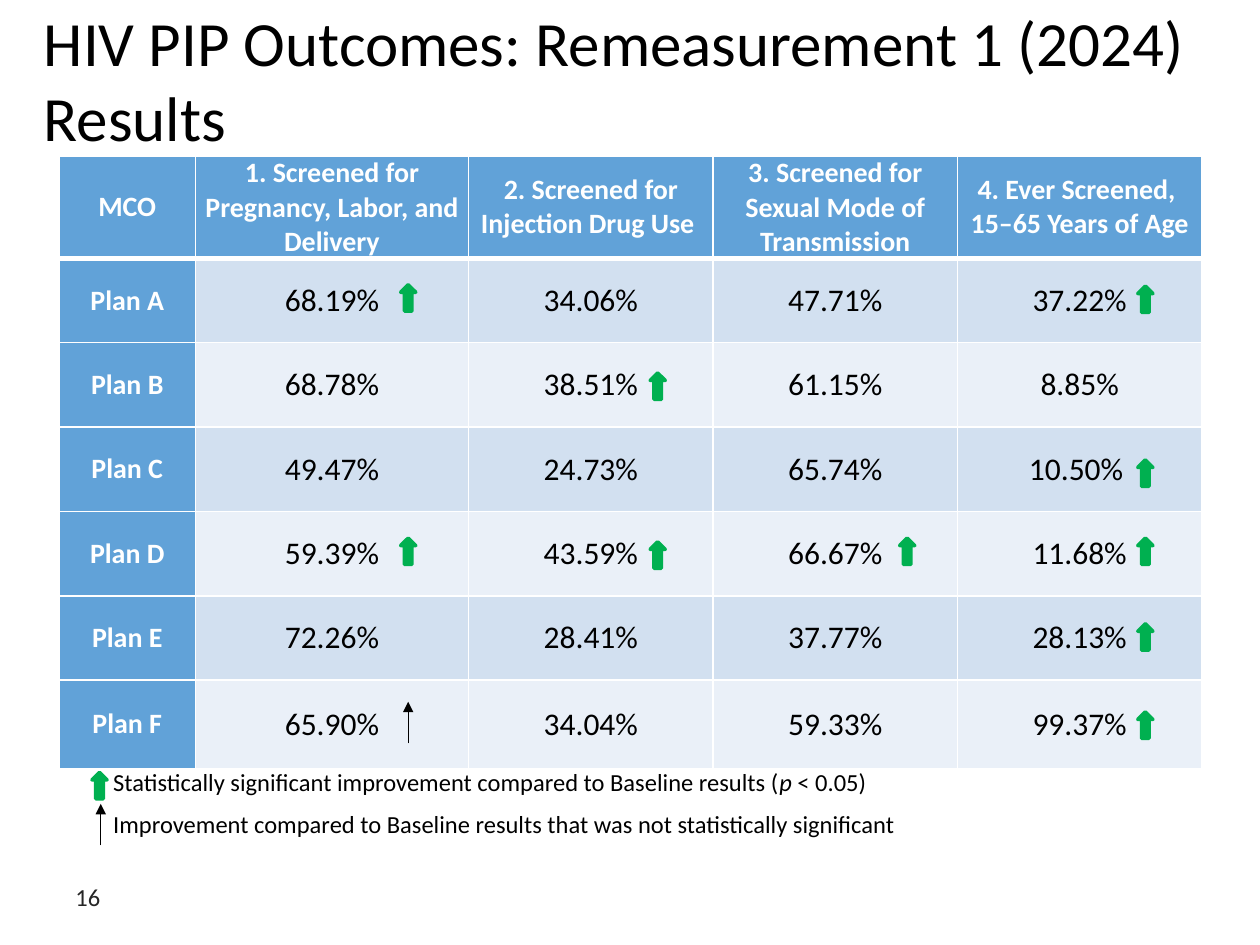
from dataclasses import dataclass
from typing import NamedTuple

from lxml.etree import SubElement
from pptx import Presentation
from pptx.dml.color import RGBColor
from pptx.enum.shapes import MSO_CONNECTOR, MSO_SHAPE
from pptx.enum.text import MSO_ANCHOR, PP_ALIGN
from pptx.oxml.ns import qn
from pptx.util import Inches, Pt


@dataclass(frozen=True)
class Theme:
    font: str = "Calibri"
    black: str = "000000"
    white: str = "FFFFFF"
    page_number: str = "262626"
    header: str = "61A2D8"
    bands: tuple = ("D2E0F0", "EAF0F8")
    green: str = "00B050"
    title_size: float = 36
    value_size: float = 18
    header_size: float = 16
    note_size: float = 14


class Box(NamedTuple):
    left: float
    top: float
    width: float
    height: float

    def inches(self) -> list:
        return [Inches(v) for v in self]


class Mark(NamedTuple):
    x: float
    y: float


THEME = Theme()
TABLE = Box(0.47, 1.24, 9.06, 4.84)
COLUMNS = [1.08, 2.17, 1.94, 1.94, 1.94]
ROWS = [0.81] + [0.67] * 5 + [0.7]
HEADERS = [
    "MCO",
    "1. Screened for Pregnancy, Labor, and Delivery",
    "2. Screened for Injection Drug Use ",
    "3. Screened for Sexual Mode of Transmission",
    "4. Ever Screened, \n15–65 Years of Age",
]
RESULTS = [
    ["Plan A", "68.19%", "34.06%", "47.71%", "37.22%"],
    ["Plan B", "68.78%", "38.51%", "61.15%", "8.85%"],
    ["Plan C", "49.47%", "24.73%", "65.74%", "10.50% "],
    ["Plan D", "59.39%", "43.59%", "66.67%", "11.68%"],
    ["Plan E", "72.26%", "28.41%", "37.77%", "28.13%"],
    ["Plan F", "65.90%", "34.04%", "59.33%", "99.37%"],
]
# Left edge of the arrows in each measure's column, with their tops
SIGNIFICANT = {
    3.18: [2.26, 4.27],
    5.16: [2.96, 4.3],
    7.14: [4.27],
    9.03: [2.27, 3.65, 4.27, 4.95, 5.65],
    0.73: [6.13],  # legend
}
NOT_SIGNIFICANT = [Mark(3.24, 5.57), Mark(0.8, 6.38)]


def rgb(color: str) -> RGBColor:
    return RGBColor.from_string(color)


def style(p, size: float, color: str, bold: bool = False) -> None:
    p.font.name = THEME.font
    p.font.size = Pt(size)
    p.font.color.rgb = rgb(color)
    p.font.bold = bold


def add_text(s, box: Box, anchor=MSO_ANCHOR.TOP):
    tf = s.shapes.add_textbox(*box.inches()).text_frame
    tf.word_wrap = True
    tf.vertical_anchor = anchor
    return tf


def add_title(s, text: str) -> None:
    tf = add_text(s, Box(0.25, 0.04, 9.5, 1.17), MSO_ANCHOR.MIDDLE)
    tf.margin_left, tf.margin_right = Inches(0.1), 0
    p = tf.paragraphs[0]
    p.text = text
    p.space_after = Pt(2)
    style(p, THEME.title_size, THEME.black)


def set_borders(cell, bottom: float) -> None:
    tc_pr = cell._tc.get_or_add_tcPr()
    for i, (side, width) in enumerate(
        [("lnL", 1), ("lnR", 1), ("lnT", 1), ("lnB", bottom)]
    ):
        ln = tc_pr.makeelement(qn(f"a:{side}"), {"w": str(Pt(width))})
        fill = SubElement(ln, qn("a:solidFill"))
        SubElement(fill, qn("a:srgbClr"), val=THEME.white)
        tc_pr.insert(i, ln)


def fill_cell(cell, text: str, row: int, col: int) -> None:
    is_label = row == 0 or col == 0
    cell.text = text
    cell.vertical_anchor = MSO_ANCHOR.MIDDLE
    cell.margin_left = cell.margin_right = Inches(0.07)
    cell.margin_top = cell.margin_bottom = 0
    cell.fill.solid()
    cell.fill.fore_color.rgb = rgb(
        THEME.header if is_label else THEME.bands[(row - 1) % 2]
    )
    for p in cell.text_frame.paragraphs:
        p.alignment = PP_ALIGN.CENTER
        if row:
            p.space_after = Pt(2)
        if is_label:
            style(p, THEME.header_size, THEME.white, bold=True)
        else:
            style(p, THEME.value_size, THEME.black)
    set_borders(cell, bottom=1 if row else 3)


def add_results(s) -> None:
    table = s.shapes.add_table(len(ROWS), len(COLUMNS), *TABLE.inches()).table
    for column, width in zip(table.columns, COLUMNS):
        column.width = Inches(width)
    for row, height in zip(table.rows, ROWS):
        row.height = Inches(height)
    for i, texts in enumerate([HEADERS, *RESULTS]):
        for j, text in enumerate(texts):
            fill_cell(table.cell(i, j), text, i, j)


def add_significant(s, mark: Mark) -> None:
    sp = s.shapes.add_shape(
        MSO_SHAPE.UP_ARROW, *Box(mark.x, mark.y, 0.12, 0.21).inches()
    )
    sp.shadow.inherit = False
    sp.fill.solid()
    sp.fill.fore_color.rgb = rgb(THEME.green)
    sp.line.color.rgb = rgb(THEME.green)
    sp.line.width = Pt(2)


def add_not_significant(s, mark: Mark) -> None:
    x = Inches(mark.x)
    line = s.shapes.add_connector(
        MSO_CONNECTOR.STRAIGHT, x, Inches(mark.y + 0.33), x, Inches(mark.y)
    )
    line.line.color.rgb = rgb(THEME.black)
    line.line.width = Pt(0.75)
    SubElement(line.line._get_or_add_ln(), qn("a:tailEnd"), type="triangle")
    SubElement(line._element.spPr, qn("a:effectLst"))


def add_legend(s) -> None:
    tf = add_text(s, Box(0.8, 6.04, 8.22, 0.67))
    p = tf.paragraphs[0]
    for text in [
        "Statistically significant improvement compared to Baseline results (",
        "p",
        " < 0.05)",
    ]:
        r = p.add_run()
        r.text = text
        r.font.italic = text == "p"
    style(p, THEME.note_size, THEME.black)
    p = tf.add_paragraph()
    p.text = (
        "Improvement compared to Baseline results "
        "that was not statistically significant"
    )
    p.space_before = Pt(7)
    style(p, THEME.note_size, THEME.black)


def main() -> None:
    prs = Presentation()
    prs.slide_width, prs.slide_height = Inches(10), Inches(7.5)
    s = prs.slides.add_slide(prs.slide_layouts[6])
    add_title(s, "HIV PIP Outcomes: Remeasurement 1 (2024) Results")
    p = add_text(s, Box(0.5, 6.83, 0.83, 0.58), MSO_ANCHOR.MIDDLE).paragraphs[0]
    p.text = "16"
    style(p, THEME.note_size, THEME.page_number)
    add_results(s)
    add_legend(s)
    for x, tops in SIGNIFICANT.items():
        for y in tops:
            add_significant(s, Mark(x, y))
    for mark in NOT_SIGNIFICANT:
        add_not_significant(s, mark)
    prs.save("out.pptx")


if __name__ == "__main__":
    main()
